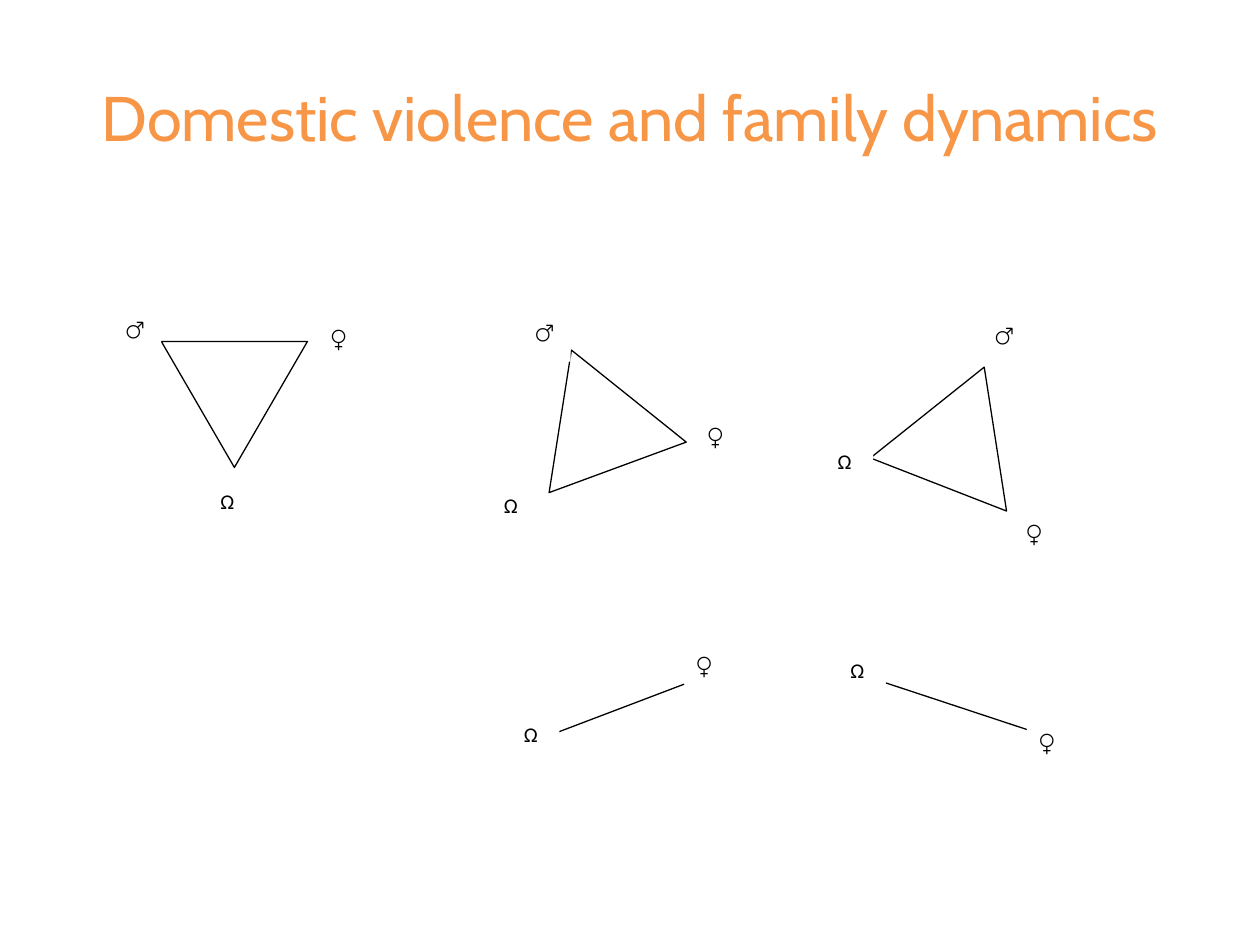
from lxml import etree
from pptx import Presentation, util as u
from pptx.dml.color import RGBColor
from pptx.enum import shapes, text
from pptx.oxml.ns import qn

COLUMN = ROW = u.Inches(0.1)  # the slide is 100 columns by 75 rows
TRIANGLE_SIZE = 11.6, 10
LINE_WIDTH = u.Pt(0.75)
SMALL, TALL, LARGE = (3.8, 3.8), (3.8, 5), (5, 5)
TOP_INSET = {"♂": 0.5, "♀": 2.5, "Ω": 0.5}  # in rows


def paint(colour_format, colour):
    if hasattr(colour_format, "solid"):
        colour_format.solid()
        colour_format = colour_format.fore_color
    colour_format.rgb = RGBColor.from_string(colour)


def write(frame, words, font_name, size, colour):
    run = frame.paragraphs[0].add_run()
    run.text = words
    run.font.name, run.font.size = font_name, u.Pt(size)
    paint(run.font.color, colour)


deck = Presentation()
deck.slide_width, deck.slide_height = 100 * COLUMN, 75 * ROW
slide = deck.slides.add_slide(deck.slide_layouts[6])

title = slide.shapes.add_textbox(5 * COLUMN, 3 * ROW, 90 * COLUMN, int(12.5 * ROW)).text_frame
title.word_wrap = True
title.vertical_anchor = text.MSO_ANCHOR.MIDDLE
title.paragraphs[0].alignment = text.PP_ALIGN.CENTER
write(title, "Domestic violence and family dynamics", "Cabin", 36, "F79646")

# Triads: left, top, rotation and apex of the triangle; then each member's symbol, left, top, size
triads = [
    ((12.8, 27.1, 180, 0.5),
     [("Ω", 16.5, 38.3, LARGE), ("♀", 25.3, 23.3, TALL), ("♂", 9, 24.6, SMALL)]),
    ((41.5, 27.4, 339.8, 0.48),
     [("♂", 41.5, 24.9, SMALL), ("♀", 55.2, 31.1, TALL), ("Ω", 39, 38.6, TALL)]),
    ((70.5, 28.8, 21.3, 0.5),
     [("Ω", 65.5, 35.1, SMALL), ("♀", 80.5, 38.8, TALL), ("♂", 78, 25.1, SMALL)]),
]
# Pairs: both ends of the line; then the members
pairs = [
    ((44.3, 58.1, 54.3, 54.3), [("Ω", 40.6, 56.8, TALL), ("♀", 54.3, 49.3, TALL)]),
    ((70.3, 54.2, 81.5, 57.9), [("Ω", 66.5, 51.7, TALL), ("♀", 81.5, 55.4, TALL)]),
]

for bond, members in triads + pairs:
    family = slide.shapes.add_group_shape().shapes
    if len(members) == 3:
        left, top, rotation, apex = bond
        box = [int(n * COLUMN) for n in (left, top, *TRIANGLE_SIZE)]
        link = family.add_shape(shapes.MSO_SHAPE.ISOSCELES_TRIANGLE, *box)
        link.rotation, link.adjustments[0] = rotation, apex
        link.shadow.inherit = False
        paint(link.fill, "FFFFFF")
    else:
        ends = [int(n * COLUMN) for n in bond]
        link = family.add_connector(shapes.MSO_CONNECTOR.STRAIGHT, *ends)
        etree.SubElement(link._element.spPr, qn("a:effectLst"))
    # The line's fill is inserted in schema order, before the effect list
    paint(link.line.fill, "000000")
    link.line.width = LINE_WIDTH

    for symbol, left, top, size in members:
        box = [int(n * COLUMN) for n in (left, top, *size)]
        member = family.add_shape(shapes.MSO_SHAPE.RECTANGLE, *box)
        member.shadow.inherit = False
        paint(member.fill, "FFFFFF")
        member.line.fill.background()
        frame = member.text_frame
        frame.word_wrap = True
        frame.vertical_anchor = text.MSO_ANCHOR.TOP
        frame.margin_top = int(TOP_INSET[symbol] * ROW)
        frame.paragraphs[0].alignment = text.PP_ALIGN.LEFT
        write(frame, symbol, "Calibri", 12, "000000")

deck.save("out.pptx")
